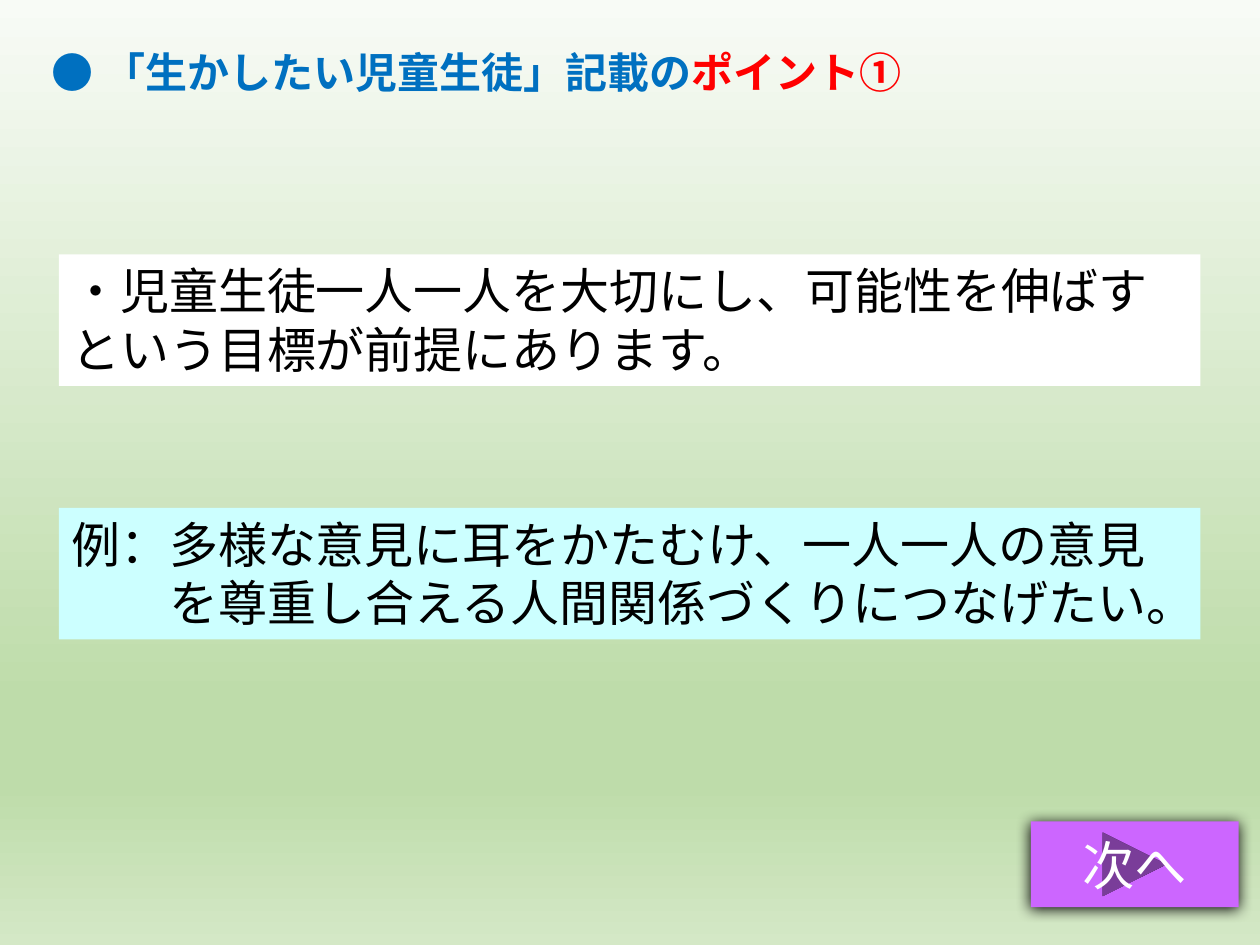
from lxml.etree import SubElement
from pptx import Presentation
from pptx.dml.color import RGBColor
from pptx.enum.shapes import MSO_SHAPE
from pptx.enum.text import MSO_ANCHOR, MSO_AUTO_SIZE, PP_ALIGN
from pptx.oxml.ns import qn
from pptx.util import Cm, Pt

FONT = "Noto Sans CJK JP"
COLORS = {
    "heading": "0070C0",
    "accent": "FF0000",
    "text": "000000",
    "button": "CC66FF",
    "button_text": "FFFFFF",
    "point": "FFFFFF",
    "example": "CCFFFF",
    "shadow": "000000",
}
BACKGROUND_STOPS = [(0, "F8FBF6"), (74, "BEDCAA"), (83, "BEDCAA"), (100, "D4E8C6")]


def rgb(name):
    return RGBColor.from_string(COLORS[name])


def style_paragraph(paragraph, size, color, bold=False):
    font = paragraph.font
    font.size, font.bold, font.name = Pt(size), bold, FONT
    font.color.rgb = rgb(color)
    # East Asian typeface, next to the Latin one
    SubElement(font._element, qn("a:ea"), typeface=FONT)


def paint_background(slide):
    fill = slide.background.fill
    fill.gradient()
    fill.gradient_angle = 270
    stops = slide.element.find(".//" + qn("a:gsLst"))
    for stop in list(stops):
        stops.remove(stop)
    for percent, color in BACKGROUND_STOPS:
        stop = SubElement(stops, qn("a:gs"), pos=str(percent * 1000))
        SubElement(stop, qn("a:srgbClr"), val=color)


def add_heading(slide, title, accent):
    heading = slide.shapes.add_textbox(Cm(0.79), Cm(0.81), Cm(18.69), Cm(1.27))
    heading.text_frame.word_wrap = True
    paragraph = heading.text_frame.paragraphs[0]
    paragraph.add_run().text = title
    accent_run = paragraph.add_run()
    accent_run.text = accent
    style_paragraph(paragraph, 24, "heading", bold=True)
    accent_run.font.color.rgb = rgb("accent")


def add_filled_shape(slide, kind, box, fill, lines, size, color, align):
    shape = slide.shapes.add_shape(kind, *(Cm(length) for length in box))
    shape.shadow.inherit = False
    shape.fill.solid()
    shape.fill.fore_color.rgb = rgb(fill)
    shape.line.fill.background()
    frame = shape.text_frame
    frame.word_wrap = True
    frame.text = "\n".join(lines)
    for paragraph in frame.paragraphs:
        paragraph.alignment = align
        style_paragraph(paragraph, size, color)
    return shape


def add_panel(slide, top, fill, lines):
    panel = add_filled_shape(slide, MSO_SHAPE.RECTANGLE, (1.19, top, 23.01, 2.65),
                             fill, lines, 28, "text", PP_ALIGN.LEFT)
    panel.text_frame.vertical_anchor = MSO_ANCHOR.TOP
    panel.text_frame.auto_size = MSO_AUTO_SIZE.SHAPE_TO_FIT_TEXT
    return panel


def add_next_button(slide, label):
    button = add_filled_shape(slide, MSO_SHAPE.ACTION_BUTTON_FORWARD_OR_NEXT,
                              (20.78, 16.56, 4.19, 1.73), "button", [label],
                              30, "button_text", PP_ALIGN.CENTER)
    button.text_frame.vertical_anchor = MSO_ANCHOR.MIDDLE
    # Soft shadow just below the button
    effects = button.element.spPr.find(qn("a:effectLst"))
    shadow = SubElement(effects, qn("a:outerShdw"), blurRad=str(Pt(8.5)),
                        dist=str(Pt(1)), dir="5400000", rotWithShape="0")
    SubElement(shadow, qn("a:srgbClr"), val=COLORS["shadow"])


def main():
    presentation = Presentation()
    presentation.slide_width, presentation.slide_height = Cm(25.4), Cm(19.05)
    slide = presentation.slides.add_slide(presentation.slide_layouts[6])
    paint_background(slide)

    # Heading and way onward
    add_heading(slide, "● 「生かしたい児童生徒」記載の", "ポイント①")
    add_next_button(slide, "次へ")

    # Point and its example
    add_panel(slide, 5.13, "point",
              ["・児童生徒一人一人を大切にし、可能性を伸ばすという目標が前提にあります。"])
    example = add_panel(slide, 10.24, "example",
                        ["例：多様な意見に耳をかたむけ、一人一人の意見",
                         "を尊重し合える人間関係づくりにつなげたい。"])
    # Second line starts two characters in, below the text after "例："
    continuation = example.text_frame.paragraphs[1]
    continuation._p.get_or_add_pPr().set("marL", str(Pt(2 * 28)))

    presentation.save("out.pptx")


if __name__ == "__main__":
    main()
